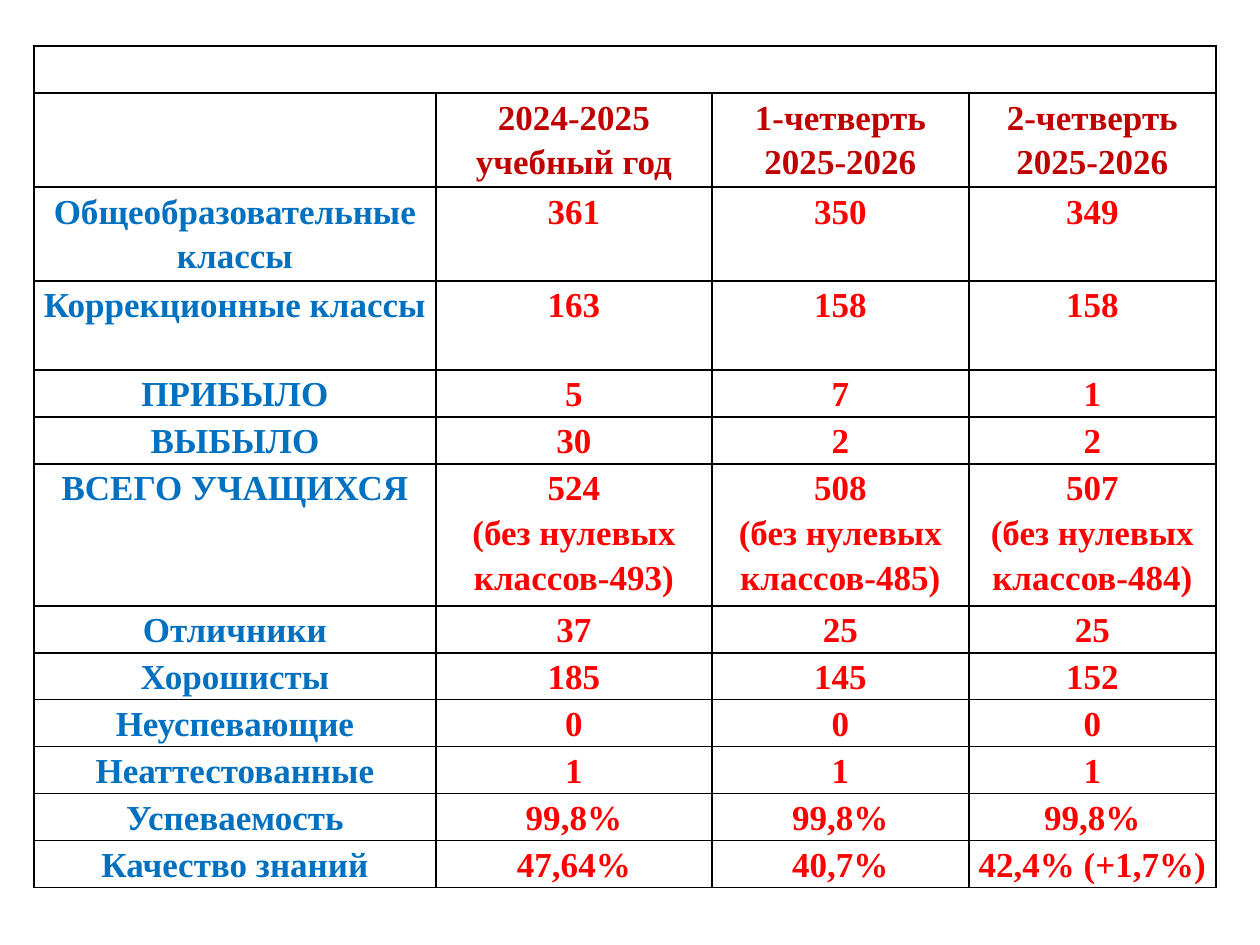
from lxml import etree
from pptx import Presentation
from pptx import util as u
from pptx.dml.color import RGBColor
from pptx.enum import text
from pptx.oxml import ns

PX = u.Inches(1) / 126
FONT = "Times New Roman"
BLACK = RGBColor(0x00, 0x00, 0x00)
DARK_RED = RGBColor(0xC0, 0x00, 0x00)
RED = RGBColor(0xFF, 0x00, 0x00)
BLUE = RGBColor(0x00, 0x70, 0xC0)

LINE = 47
COLUMN_WIDTHS = [402, 276, 257, 247]
ROW_HEIGHTS = [LINE, 2 * LINE, 2 * LINE, 89, LINE, LINE, 142] + [LINE] * 6
ROWS = [
    ["", "", "", ""],
    ["", "2024-2025 учебный год", "1-четверть 2025-2026", "2-четверть 2025-2026"],
    ["Общеобразовательные классы", "361", "350", "349"],
    ["Коррекционные классы", "163", "158", "158"],
    ["ПРИБЫЛО", "5", "7", "1"],
    ["ВЫБЫЛО", "30", "2", "2"],
    ["ВСЕГО УЧАЩИХСЯ", "524\n(без нулевых классов-493)",
     "508\n(без нулевых классов-485)", "507\n(без нулевых классов-484)"],
    ["Отличники", "37", "25", "25"],
    ["Хорошисты", "185", "145", "152"],
    ["Неуспевающие", "0", "0", "0"],
    ["Неаттестованные", "1", "1", "1"],
    ["Успеваемость", "99,8%", "99,8%", "99,8%"],
    ["Качество знаний", "47,64%", "40,7%", "42,4% (+1,7%)"],
]


def px(n):
    return u.Emu(round(n * PX))


def add_borders(cell):
    tc_pr = cell._tc.get_or_add_tcPr()
    for side in ("a:lnL", "a:lnR", "a:lnT", "a:lnB"):
        ln = etree.SubElement(tc_pr, ns.qn(side), w=str(u.Pt(1)))
        fill = etree.SubElement(ln, ns.qn("a:solidFill"))
        etree.SubElement(fill, ns.qn("a:srgbClr"), val=str(BLACK))


def fill_cell(cell, value, color):
    add_borders(cell)
    cell.fill.background()
    cell.margin_left = cell.margin_right = px(8)
    cell.margin_top = cell.margin_bottom = 0
    cell.text_frame.text = value
    for p in cell.text_frame.paragraphs:
        p.alignment = text.PP_ALIGN.CENTER
        p.line_spacing = 1.15
        p.font.name = FONT
        p.font.size = u.Pt(20)
        p.font.bold = True
        p.font.color.rgb = color


def text_color(row, column):
    if row <= 1:
        return DARK_RED
    return RED if column else BLUE


def add_results_table(s):
    frame = s.shapes.add_table(len(ROWS), len(COLUMN_WIDTHS), px(34), px(46),
                               px(sum(COLUMN_WIDTHS)), px(sum(ROW_HEIGHTS)))
    table = frame.table
    table.first_row = table.horz_banding = False
    for column, width in zip(table.columns, COLUMN_WIDTHS):
        column.width = px(width)
    for row, height in zip(table.rows, ROW_HEIGHTS):
        row.height = px(height)
    for i, values in enumerate(ROWS):
        for j, value in enumerate(values):
            fill_cell(table.cell(i, j), value, text_color(i, j))
    table.cell(0, 0).merge(table.cell(0, len(COLUMN_WIDTHS) - 1))


def main():
    prs = Presentation()
    prs.slide_width, prs.slide_height = px(1260), px(945)
    s = prs.slides.add_slide(prs.slide_layouts[6])
    add_results_table(s)
    prs.save("out.pptx")


if __name__ == "__main__":
    main()
